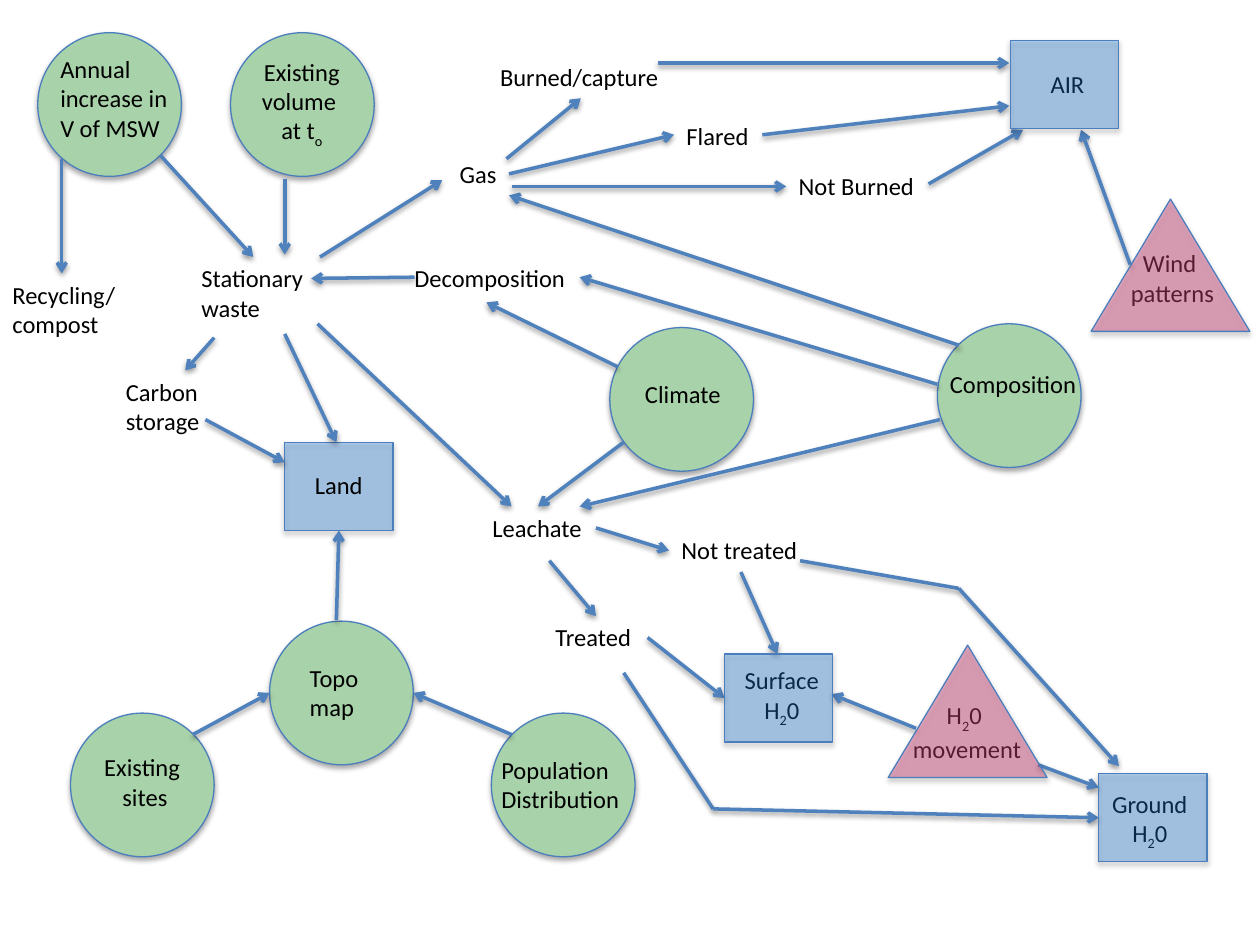
from typing import NamedTuple

from lxml.etree import SubElement
from pptx import Presentation
from pptx.dml.color import RGBColor
from pptx.enum.shapes import MSO_CONNECTOR, MSO_SHAPE
from pptx.enum.text import MSO_AUTO_SIZE, PP_ALIGN
from pptx.oxml.ns import qn
from pptx.util import Inches, Pt

GREEN, BLUE, PINK = "A8D2A9", "1C78D7", "CF4077"
OUTLINE, ARROW, INK = "4B7EBC", "4F81BD", "000000"
EMU_PER_POINT = 12700


class Node(NamedTuple):
    left: float
    top: float


class NodeStyle(NamedTuple):
    kind: MSO_SHAPE
    width: float
    height: float
    colour: str
    opacity: int = 100


class Flow(NamedTuple):
    x1: float
    y1: float
    x2: float
    y2: float
    arrow: bool = True


class Label(NamedTuple):
    """Lines of text; an underscore makes the next character a subscript."""
    left: float
    top: float
    width: float
    lines: tuple[str, ...]
    centred: bool = False
    wrap: bool = False
    height: float = 0.57


SOURCE = NodeStyle(MSO_SHAPE.OVAL, 1.14, 1.14, GREEN)
SINK = NodeStyle(MSO_SHAPE.RECTANGLE, 0.86, 0.7, BLUE, 33)
FORCE = NodeStyle(MSO_SHAPE.ISOSCELES_TRIANGLE, 1.26, 1.05, PINK, 42)

LAND = Node(2.26, 3.51)
SOURCES = [
    Node(4.84, 2.6), Node(2.14, 4.93), Node(0.56, 5.66), Node(3.9, 5.66),
    Node(1.83, 0.26), Node(0.3, 0.26), Node(7.44, 2.57),
]
TINTED_SINKS = [Node(8.02, 0.32), Node(5.75, 5.19), Node(8.72, 6.14)]
FORCES = [Node(7.05, 5.12), Node(8.66, 1.58)]

FLOWS = [
    # volume, sites and land
    Flow(2.26, 1.42, 2.26, 2.02), Flow(1.27, 1.23, 2.01, 2.04),
    Flow(0.49, 1.26, 0.49, 2.17), Flow(1.53, 5.83, 2.14, 5.5),
    Flow(4.06, 5.83, 3.28, 5.5), Flow(2.67, 4.92, 2.69, 4.21),
    # stationary waste
    Flow(2.26, 2.65, 2.67, 3.51), Flow(1.7, 2.68, 1.47, 2.94),
    Flow(1.63, 3.33, 2.26, 3.67), Flow(3.29, 2.2, 2.47, 2.21),
    Flow(2.54, 2.04, 3.51, 1.43), Flow(2.52, 2.57, 4.06, 4.02),
    # climate and composition
    Flow(4.9, 2.91, 3.86, 2.4), Flow(4.95, 3.51, 4.27, 4.02),
    Flow(7.44, 3.05, 4.6, 2.2), Flow(7.46, 3.33, 4.6, 4.02),
    Flow(7.61, 2.74, 4.04, 1.55),
    # leachate and water
    Flow(4.36, 4.45, 4.73, 4.89), Flow(4.73, 4.19, 5.31, 4.37),
    Flow(5.14, 5.06, 5.75, 5.54), Flow(5.88, 4.54, 6.17, 5.19),
    Flow(8.24, 6.07, 8.72, 6.25), Flow(7.27, 5.78, 6.6, 5.51),
    Flow(4.95, 5.34, 5.66, 6.42, arrow=False), Flow(5.66, 6.42, 8.72, 6.49),
    Flow(6.35, 4.45, 7.61, 4.67, arrow=False), Flow(7.61, 4.67, 8.88, 6.08),
    # gas and air
    Flow(4.02, 1.26, 4.61, 0.78), Flow(4.04, 1.38, 5.35, 1.07),
    Flow(4.06, 1.48, 6.24, 1.48), Flow(5.22, 0.5, 8.01, 0.5),
    Flow(6.05, 1.07, 8.01, 0.84), Flow(7.37, 1.46, 8.12, 1.03),
    Flow(8.97, 2.1, 8.58, 1.03),
]

LABELS = [
    Label(0.38, 0.38, 1.09, ("Annual increase in V of MSW",), wrap=True, height=0.81),
    Label(1.79, 0.4, 1.21, ("Existing volume ", "at t_o"), True, True, 0.81),
    Label(1.5, 2.04, 1.02, ("Stationary", "waste")),
    Label(2.36, 5.21, 0.61, ("Topo", "map")),
    Label(0.66, 5.92, 0.98, ("Existing ", "sites"), True, True),
    Label(2.4, 3.68, 0.58, ("Land",), height=0.34),
    Label(0.9, 2.94, 0.81, ("Carbon", "storage")),
    Label(3.88, 5.94, 1.15, ("Population", "Distribution")),
    Label(0, 2.17, 1.19, ("Recycling/compost",), wrap=True),
    Label(3.81, 4.02, 0.92, ("Leachate",), height=0.34),
    Label(3.55, 1.21, 0.5, ("Gas",), height=0.34),
    Label(3.19, 2.04, 1.41, ("Decomposition",), height=0.34),
    Label(5.02, 2.96, 0.81, ("Climate",), height=0.34),
    Label(7.44, 2.88, 1.21, ("Composition",), height=0.34),
    Label(4.31, 4.89, 0.82, ("Treated",), height=0.34),
    Label(5.31, 4.2, 1.13, ("Not treated",), height=0.34),
    Label(5.8, 5.23, 0.81, ("Surface ", "H_20"), True),
    Label(8.72, 6.21, 0.81, ("Ground ", "H_20"), True),
    Label(7.14, 5.51, 1.07, ("H_20 ", "movement"), True),
    Label(3.87, 0.44, 1.48, ("Burned/capture",), height=0.34),
    Label(6.24, 1.31, 1.12, ("Not Burned",), height=0.34),
    Label(5.35, 0.91, 0.7, ("Flared",), height=0.34),
    Label(8.24, 0.5, 0.63, ("AIR",), wrap=True, height=0.34),
    Label(8.87, 1.92, 0.87, ("Wind ", "patterns"), True),
]


def rgb(colour: str) -> RGBColor:
    return RGBColor.from_string(colour)


def add_shadow(properties, distance: float, opacity: int) -> None:
    """Add a soft downward shadow to finished shape properties."""
    effects = SubElement(properties, qn("a:effectLst"))
    shadow = SubElement(
        effects, qn("a:outerShdw"), blurRad=str(int(3.1 * EMU_PER_POINT)),
        dist=str(int(distance * EMU_PER_POINT)), dir="5400000", rotWithShape="0")
    black = SubElement(shadow, qn("a:srgbClr"), val=INK)
    SubElement(black, qn("a:alpha"), val=str(opacity * 1000))


def add_node(page, node: Node, style: NodeStyle) -> None:
    shape = page.shapes.add_shape(
        style.kind, Inches(node.left), Inches(node.top),
        Inches(style.width), Inches(style.height))
    shape.fill.solid()
    shape.fill.fore_color.rgb = rgb(style.colour)
    properties = shape._element.spPr
    if style.opacity < 100:
        colour = properties.find(qn("a:solidFill")).find(qn("a:srgbClr"))
        SubElement(colour, qn("a:alpha"), val=str(style.opacity * 1000))
    shape.line.color.rgb = rgb(OUTLINE)
    shape.line.width = Pt(0.75)
    add_shadow(properties, 1.8, 35)


def add_flow(page, flow: Flow) -> None:
    connector = page.shapes.add_connector(
        MSO_CONNECTOR.STRAIGHT, Inches(flow.x1), Inches(flow.y1),
        Inches(flow.x2), Inches(flow.y2))
    connector.line.color.rgb = rgb(ARROW)
    connector.line.width = Pt(2)
    properties = connector._element.spPr
    if flow.arrow:
        SubElement(properties.find(qn("a:ln")), qn("a:tailEnd"), type="arrow")
    add_shadow(properties, 1.6, 38)


def add_line_of_text(para, line: str) -> None:
    plain, mark, rest = line.partition("_")
    para.text = plain
    if mark:
        subscript = para.add_run()
        subscript.text = rest[0]
        subscript.font._element.set("baseline", "-25000")
        if rest[1:]:
            para.add_run().text = rest[1:]
    for span in para.runs:
        span.font.name = "Calibri"
        span.font.size = Pt(14)
        span.font.color.rgb = rgb(INK)


def add_label(page, label: Label) -> None:
    box = page.shapes.add_textbox(
        Inches(label.left), Inches(label.top), Inches(label.width), Inches(label.height))
    frame = box.text_frame
    frame.word_wrap = label.wrap
    frame.auto_size = MSO_AUTO_SIZE.SHAPE_TO_FIT_TEXT
    for index, line in enumerate(label.lines):
        para = frame.add_paragraph() if index else frame.paragraphs[0]
        para.alignment = PP_ALIGN.CENTER if label.centred else PP_ALIGN.LEFT
        add_line_of_text(para, line)


def main() -> None:
    deck = Presentation()
    deck.slide_width, deck.slide_height = Inches(10), Inches(7.5)
    page = deck.slides.add_slide(deck.slide_layouts.get_by_name("Blank"))
    add_node(page, LAND, SINK)
    for node in SOURCES:
        add_node(page, node, SOURCE)
    for flow in FLOWS:
        add_flow(page, flow)
    for label in LABELS:
        add_label(page, label)
    # The remaining nodes tint the labels beneath them
    for nodes, style in ((TINTED_SINKS, SINK), (FORCES, FORCE)):
        for node in nodes:
            add_node(page, node, style)
    deck.save("out.pptx")


if __name__ == "__main__":
    main()
